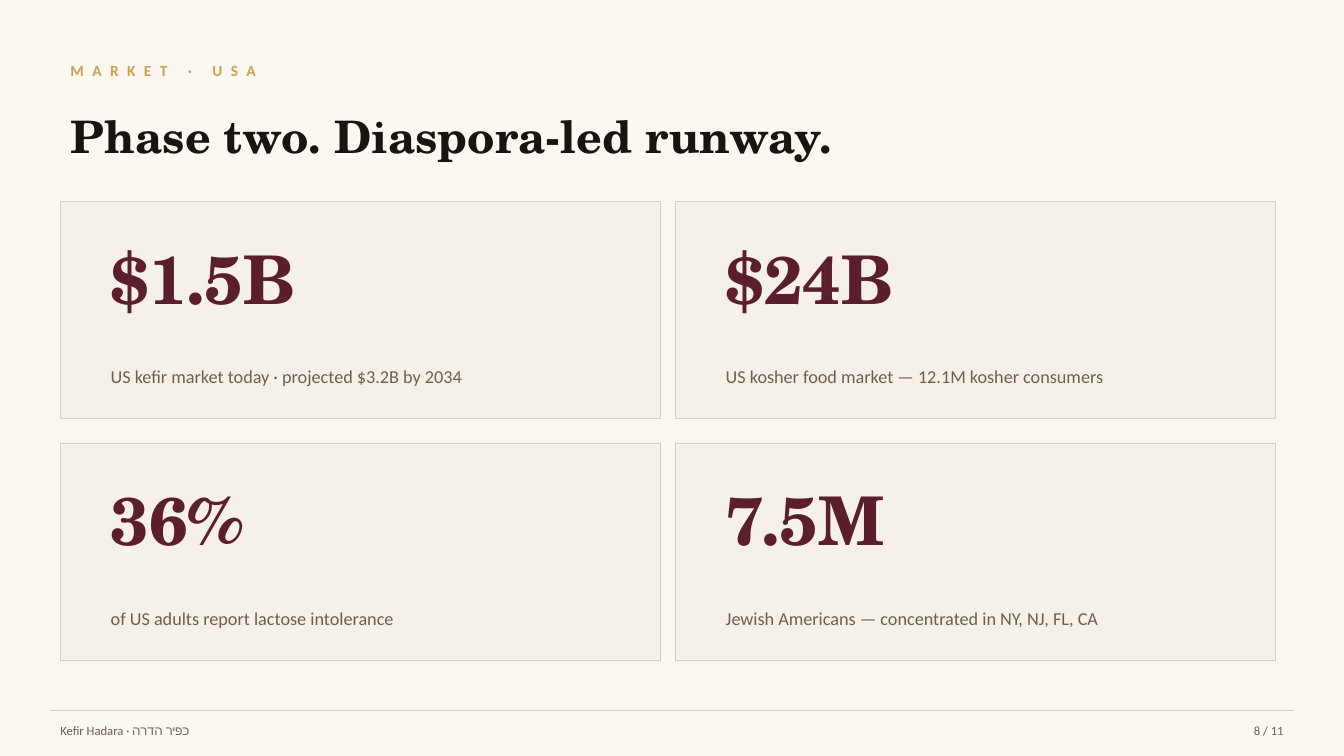
from dataclasses import dataclass

from lxml.etree import SubElement
from pptx import Presentation
from pptx.dml.color import RGBColor
from pptx.enum.shapes import MSO_CONNECTOR, MSO_SHAPE
from pptx.enum.text import MSO_ANCHOR, MSO_AUTO_SIZE, PP_ALIGN
from pptx.oxml.ns import qn
from pptx.util import Inches, Pt

HUES = {
    "page": "FBF8F2",
    "card": "F6F1E8",
    "edge": "D9CFBF",
    "gold": "C9A24C",
    "ink": "1A1410",
    "wine": "5B1E2C",
    "muted": "6B5E55",
}
SERIF = "TeX Gyre Schola"
SANS = "Calibri"


@dataclass(frozen=True)
class Style:
    size: float
    face: str
    hue: str
    bold: bool = False
    align: PP_ALIGN = PP_ALIGN.LEFT
    lead: float = 1.0
    track: int = 0


@dataclass(frozen=True)
class Stat:
    value: str
    label: str


KICKER = Style(11, SANS, "gold", bold=True, track=600)
TITLE = Style(32, SERIF, "ink", bold=True)
VALUE = Style(48, SERIF, "wine", bold=True)
LABEL = Style(13, SANS, "muted", lead=1.3)
FOOT = Style(9, SANS, "muted")
FOLIO = Style(9, SANS, "muted", align=PP_ALIGN.RIGHT)

STATS = [
    Stat("$1.5B", "US kefir market today · projected $3.2B by 2034"),
    Stat("$24B", "US kosher food market — 12.1M kosher consumers"),
    Stat("36%", "of US adults report lactose intolerance"),
    Stat("7.5M", "Jewish Americans — concentrated in NY, NJ, FL, CA"),
]
LEFT, TOP = 0.6, 2.0
WIDE, HIGH = 5.95, 2.15
GAP_X, GAP_Y = 0.15, 0.25


def paint(name: str) -> RGBColor:
    return RGBColor.from_string(HUES[name])


def write(shape, text: str, style: Style) -> None:
    frame = shape.text_frame
    frame.text = text
    frame.word_wrap = True
    frame.auto_size = MSO_AUTO_SIZE.NONE
    frame.vertical_anchor = MSO_ANCHOR.MIDDLE
    para = frame.paragraphs[0]
    para.alignment = style.align
    para.line_spacing = style.lead
    for run in para.runs:
        font = run.font
        font.size = Pt(style.size)
        font.name = style.face
        font.bold = style.bold
        font.color.rgb = paint(style.hue)
        if style.track:
            run._r.get_or_add_rPr().set("spc", str(style.track))


def add_text(slide, text: str, style: Style, x: float, y: float, w: float, h: float) -> None:
    box = slide.shapes.add_textbox(Inches(x), Inches(y), Inches(w), Inches(h))
    write(box, text, style)


def add_title(slide, text: str) -> None:
    title = slide.shapes.title
    title.left, title.top = Inches(0.6), Inches(1)
    title.width, title.height = Inches(12), Inches(0.7)
    write(title, text, TITLE)


def add_card(slide, stat: Stat, x: float, y: float) -> None:
    card = slide.shapes.add_shape(
        MSO_SHAPE.RECTANGLE, Inches(x), Inches(y), Inches(WIDE), Inches(HIGH)
    )
    card.shadow.inherit = False
    card.fill.solid()
    card.fill.fore_color.rgb = paint("card")
    card.line.color.rgb = paint("edge")
    card.line.width = Pt(0.75)
    add_text(slide, stat.value, VALUE, x + 0.4, y + 0.25, 5.2, 1)
    add_text(slide, stat.label, LABEL, x + 0.4, y + 1.35, 5.2, 0.7)


def add_foot(slide) -> None:
    add_text(slide, "Kefir Hadara · כפיר הדרה", FOOT, 0.5, 7.1, 6, 0.3)
    add_text(slide, "8 / 11", FOLIO, 12.13, 7.1, 0.7, 0.3)
    rule = slide.shapes.add_connector(
        MSO_CONNECTOR.STRAIGHT, Inches(0.5), Inches(7.05), Inches(12.83), Inches(7.05)
    )
    rule.line.color.rgb = paint("edge")
    rule.line.width = Pt(0.5)
    SubElement(rule._element.spPr, qn("a:effectLst"))


def main() -> None:
    """Build the market slide and save it."""
    deck = Presentation()
    deck.slide_width, deck.slide_height = Inches(13.33), Inches(7.5)
    slide = deck.slides.add_slide(deck.slide_layouts[5])
    slide.background.fill.solid()
    slide.background.fill.fore_color.rgb = paint("page")

    add_text(slide, "MARKET · USA", KICKER, 0.6, 0.55, 8, 0.3)
    add_title(slide, "Phase two. Diaspora-led runway.")
    for i, stat in enumerate(STATS):
        row, col = divmod(i, 2)
        add_card(slide, stat, LEFT + col * (WIDE + GAP_X), TOP + row * (HIGH + GAP_Y))
    add_foot(slide)
    deck.save("out.pptx")


if __name__ == "__main__":
    main()
